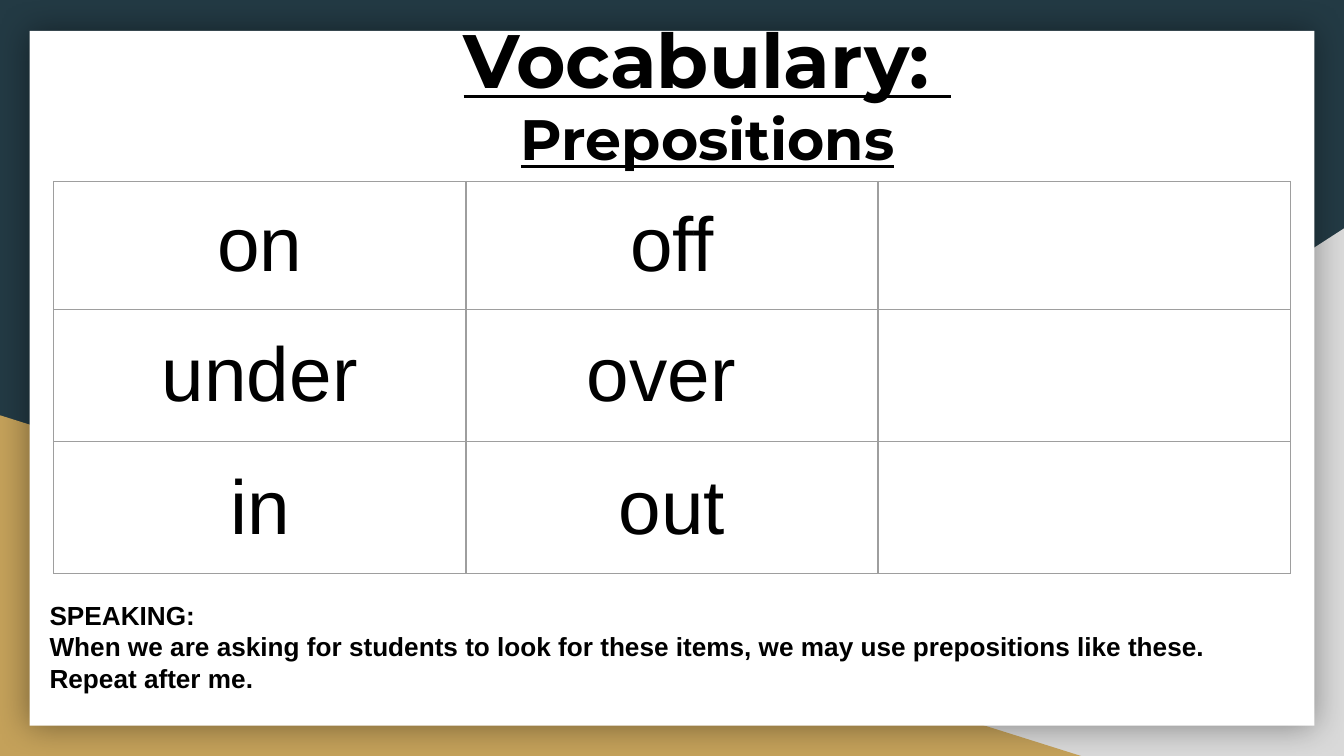
from lxml import etree
from pptx import Presentation
from pptx.dml.color import RGBColor
from pptx.enum.shapes import MSO_SHAPE
from pptx.enum.text import MSO_ANCHOR, MSO_AUTO_SIZE, PP_ALIGN
from pptx.oxml import parse_xml
from pptx.oxml.ns import nsdecls, qn
from pptx.util import Inches, Pt

TRIANGLE, RECT = MSO_SHAPE.RIGHT_TRIANGLE, MSO_SHAPE.RECTANGLE
MIDDLE, CENTER, LEFT = MSO_ANCHOR.MIDDLE, PP_ALIGN.CENTER, PP_ALIGN.LEFT
NO_FIT, GROW = MSO_AUTO_SIZE.NONE, MSO_AUTO_SIZE.SHAPE_TO_FIT_TEXT

COLORS = {"navy": "233A44", "gray": "D9D9D9", "gold": "C4A15A",
          "white": "FFFFFF", "black": "000000", "border": "9E9E9E"}
TITLE = [("Vocabulary: ", 40.5), ("Prepositions", 30.5)]
WORDS = [["on", "off", ""], ["under", "over ", ""], ["in", "out", ""]]
TABLE_HEIGHT, FIRST_ROW = 2.92, 0.95
SPEAKING = [
    "SPEAKING:",
    "When we are asking for students to look for these items, we may use prepositions like these.",
    "Repeat after me.",
]


def rgb(name):
    return RGBColor.from_string(COLORS[name])


def add_panel(s, kind, box, color):
    sp = s.shapes.add_shape(kind, *map(Inches, box))
    sp.shadow.inherit = False
    sp.fill.solid()
    sp.fill.fore_color.rgb = rgb(color)
    sp.line.fill.background()
    return sp


def write(p, text, size, font, align, bold=False, underline=False):
    p.text = text
    p.alignment = align
    p.font.size = Pt(size)
    p.font.name = font
    p.font.bold = bold
    p.font.underline = underline
    p.font.color.rgb = rgb("black")


def write_lines(tf, lines, font, align, underline=False):
    for i, (text, size) in enumerate(lines):
        p = tf.paragraphs[0] if i == 0 else tf.add_paragraph()
        write(p, text, size, font, align, True, underline)
        p.space_before = Pt(0)


def add_borders(cell):
    tc_pr = cell._tc.get_or_add_tcPr()
    for i, side in enumerate(("lnL", "lnR", "lnT", "lnB")):
        tc_pr.insert(i, parse_xml(
            f'<a:{side} {nsdecls("a")} w="{Pt(0.75)}"><a:solidFill>'
            f'<a:srgbClr val="{COLORS["border"]}"/></a:solidFill></a:{side}>'))


prs = Presentation()
prs.slide_width = Inches(10)
prs.slide_height = Inches(10 * 9 / 16)
s = prs.slides.add_slide(prs.slide_layouts[5])
s.background.fill.solid()
s.background.fill.fore_color.rgb = rgb("navy")

gray = add_panel(s, TRIANGLE, (3.92, 1.7, 6.08, 3.93), "gray")
gray.element.spPr.find(qn("a:xfrm")).set("flipH", "1")
add_panel(s, TRIANGLE, (0, 3.09, 8.06, 2.54), "gold")
card = add_panel(s, RECT, (0.22, 0.23, 9.56, 5.17), "white")
effects = card.element.spPr.find(qn("a:effectLst"))
shadow = etree.SubElement(effects, qn("a:outerShdw"), blurRad=str(Pt(18)),
                          dist="0", dir="0", algn="ctr", rotWithShape="0")
shade = etree.SubElement(shadow, qn("a:srgbClr"), val=COLORS["black"])
etree.SubElement(shade, qn("a:alpha"), val="40000")

title = s.shapes.title
s.shapes.element.append(title.element)
title.left, title.top, title.width, title.height = map(Inches, (1.39, 0.17, 7.75, 1.04))
tf = title.text_frame
tf.auto_size = NO_FIT
tf.word_wrap = True
tf.vertical_anchor = MIDDLE
tf.margin_left = tf.margin_right = tf.margin_top = tf.margin_bottom = Inches(0.1)
write_lines(tf, TITLE, "Montserrat", CENTER, underline=True)

table = s.shapes.add_table(len(WORDS), len(WORDS[0]), Inches(0.4), Inches(1.35),
                           Inches(9.2), Inches(TABLE_HEIGHT)).table
table.first_row = table.horz_banding = False
other_row = (TABLE_HEIGHT - FIRST_ROW) / (len(WORDS) - 1)
for i, (row, words) in enumerate(zip(table.rows, WORDS)):
    row.height = Inches(other_row if i else FIRST_ROW)
    for cell, word in zip(row.cells, words):
        cell.fill.background()
        add_borders(cell)
        cell.vertical_anchor = MIDDLE
        cell.margin_left = cell.margin_right = Inches(0.1)
        cell.margin_top = cell.margin_bottom = Inches(0.1)
        if word:
            write(cell.text_frame.paragraphs[0], word, 41, "Arial", CENTER)

box = s.shapes.add_textbox(*map(Inches, (0.27, 4.41, 9.08, 0.81)))
box.text_frame.word_wrap = True
box.text_frame.auto_size = GROW
write_lines(box.text_frame, [(line, 14) for line in SPEAKING], "Arial", LEFT)

prs.save("out.pptx")
